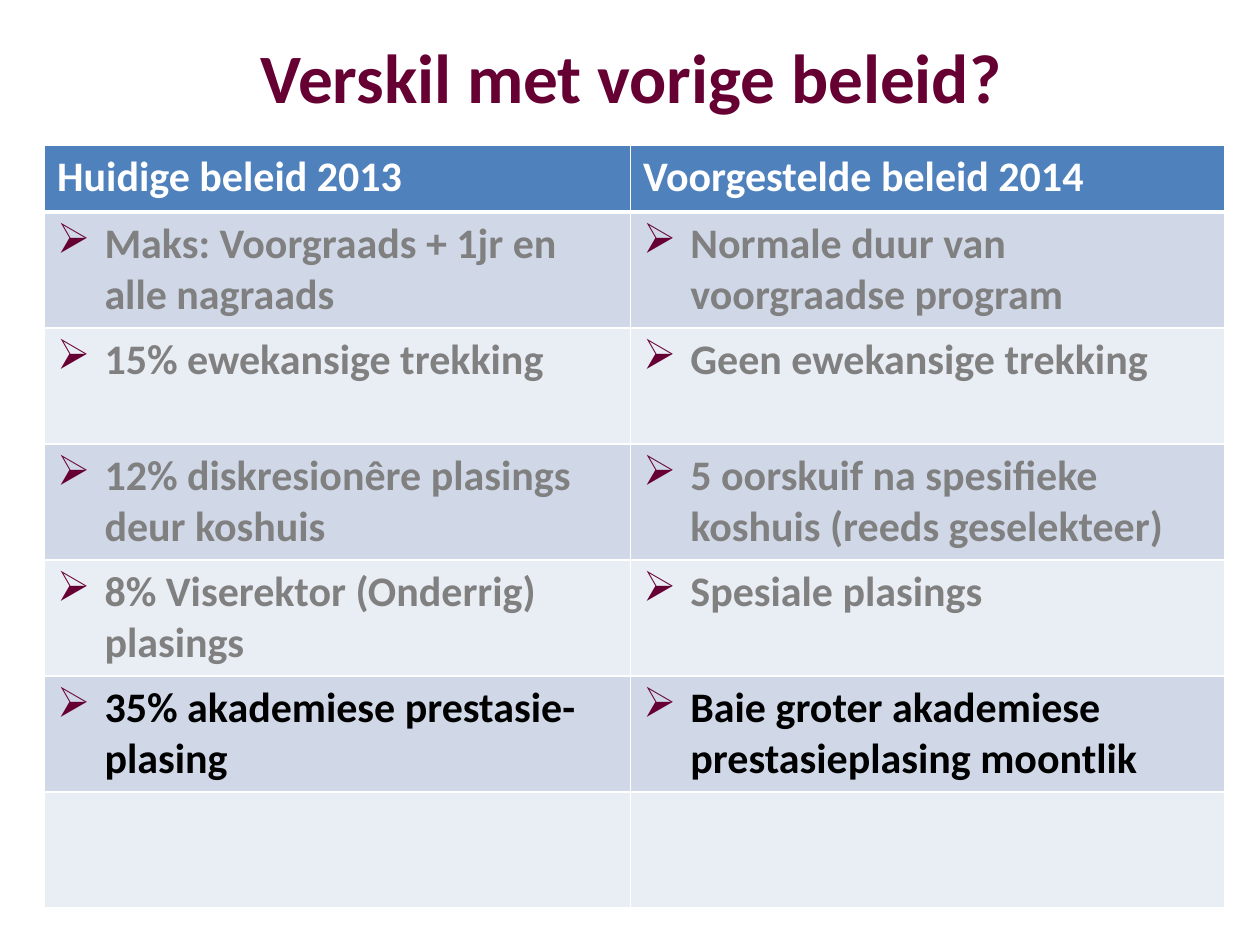
from lxml import etree
from pptx import Presentation, util as u
from pptx.dml.color import RGBColor
from pptx.enum import text
from pptx.oxml.ns import qn

Pt = u.Pt
WHITE, MAROON, GREY, BLACK = "FFFFFF", "660033", "808080", "000000"
HEADER_FILL, BANDS = "4F81BD", ("D0D8E8", "E9EDF4")

TITLE = "Verskil met vorige beleid?"
HEADINGS = ("Huidige beleid 2013", "Voorgestelde beleid 2014")
POLICIES = [
    ("Maks: Voorgraads + 1jr en alle nagraads", "Normale duur van voorgraadse program", GREY),
    ("15% ewekansige trekking", "Geen ewekansige trekking", GREY),
    ("12% diskresionêre plasings deur koshuis",
     "5 oorskuif na spesifieke koshuis (reeds geselekteer)", GREY),
    ("8% Viserektor (Onderrig) plasings", "Spesiale plasings", GREY),
    ("35% akademiese prestasie- plasing",
     "Baie groter akademiese prestasieplasing moontlik", BLACK),
    ("", "", BLACK),
]
COLUMN_WIDTHS = (334.8, 339.8)
HEADER_HEIGHT, POLICY_HEIGHT = 38.2, 66.3
BULLET_INDENT = Pt(27)


def rgb(value):
    return RGBColor.from_string(value)


def write(paragraph, words, size, color):
    run = paragraph.add_run()
    run.text = words
    font_format = {"name": "Calibri", "size": Pt(size), "bold": True}
    for attribute, value in font_format.items():
        setattr(run.font, attribute, value)
    run.font.color.rgb = rgb(color)


def add_bullet(paragraph):
    props = paragraph._p.get_or_add_pPr()
    props.set("marL", str(BULLET_INDENT))
    props.set("indent", str(-BULLET_INDENT))
    bullet_color = etree.SubElement(props, qn("a:buClr"))
    etree.SubElement(bullet_color, qn("a:srgbClr"), val=MAROON)
    etree.SubElement(props, qn("a:buChar"), char="➢")


def style_cell(cell, fill, bottom=1, top=1):
    """Borders go in before the fill, as the schema orders them."""
    props = cell._tc.get_or_add_tcPr()
    for side, width in (("L", 1), ("R", 1), ("T", top), ("B", bottom)):
        line = etree.SubElement(props, qn("a:ln" + side), w=str(Pt(width)))
        solid = etree.SubElement(line, qn("a:solidFill"))
        etree.SubElement(solid, qn("a:srgbClr"), val=WHITE)
    cell.fill.solid()
    cell.fill.fore_color.rgb = rgb(fill)


def add_title(slide):
    frame = slide.shapes.add_textbox(Pt(36.7), Pt(15.1), Pt(648), Pt(56.9)).text_frame
    frame_format = {"word_wrap": True, "vertical_anchor": text.MSO_ANCHOR.MIDDLE}
    for attribute, value in frame_format.items():
        setattr(frame, attribute, value)
    heading = frame.paragraphs[0]
    heading.alignment = text.PP_ALIGN.CENTER
    write(heading, TITLE, 39.6, MAROON)


def add_comparison(slide):
    heights = [HEADER_HEIGHT] + [POLICY_HEIGHT] * len(POLICIES)
    table = slide.shapes.add_table(
        len(heights), len(COLUMN_WIDTHS), Pt(25.5), Pt(83),
        Pt(sum(COLUMN_WIDTHS)), Pt(sum(heights))).table
    for column, width in zip(table.columns, COLUMN_WIDTHS):
        column.width = Pt(width)
    for row, height in zip(table.rows, heights):
        row.height = Pt(height)

    for col, heading in enumerate(HEADINGS):
        cell = table.cell(0, col)
        style_cell(cell, HEADER_FILL, bottom=3)
        write(cell.text_frame.paragraphs[0], heading, 24, WHITE)

    for row, (*policies, color) in enumerate(POLICIES, start=1):
        for col, policy in enumerate(policies):
            cell = table.cell(row, col)
            style_cell(cell, BANDS[(row - 1) % 2], top=3 if row == 1 else 1)
            if policy:
                paragraph = cell.text_frame.paragraphs[0]
                add_bullet(paragraph)
                write(paragraph, policy, 24, color)


def main():
    deck = Presentation()
    deck.slide_width, deck.slide_height = Pt(720), Pt(540)
    slide = deck.slides.add_slide(deck.slide_layouts[6])
    add_title(slide)
    add_comparison(slide)
    deck.save("out.pptx")


if __name__ == "__main__":
    main()
